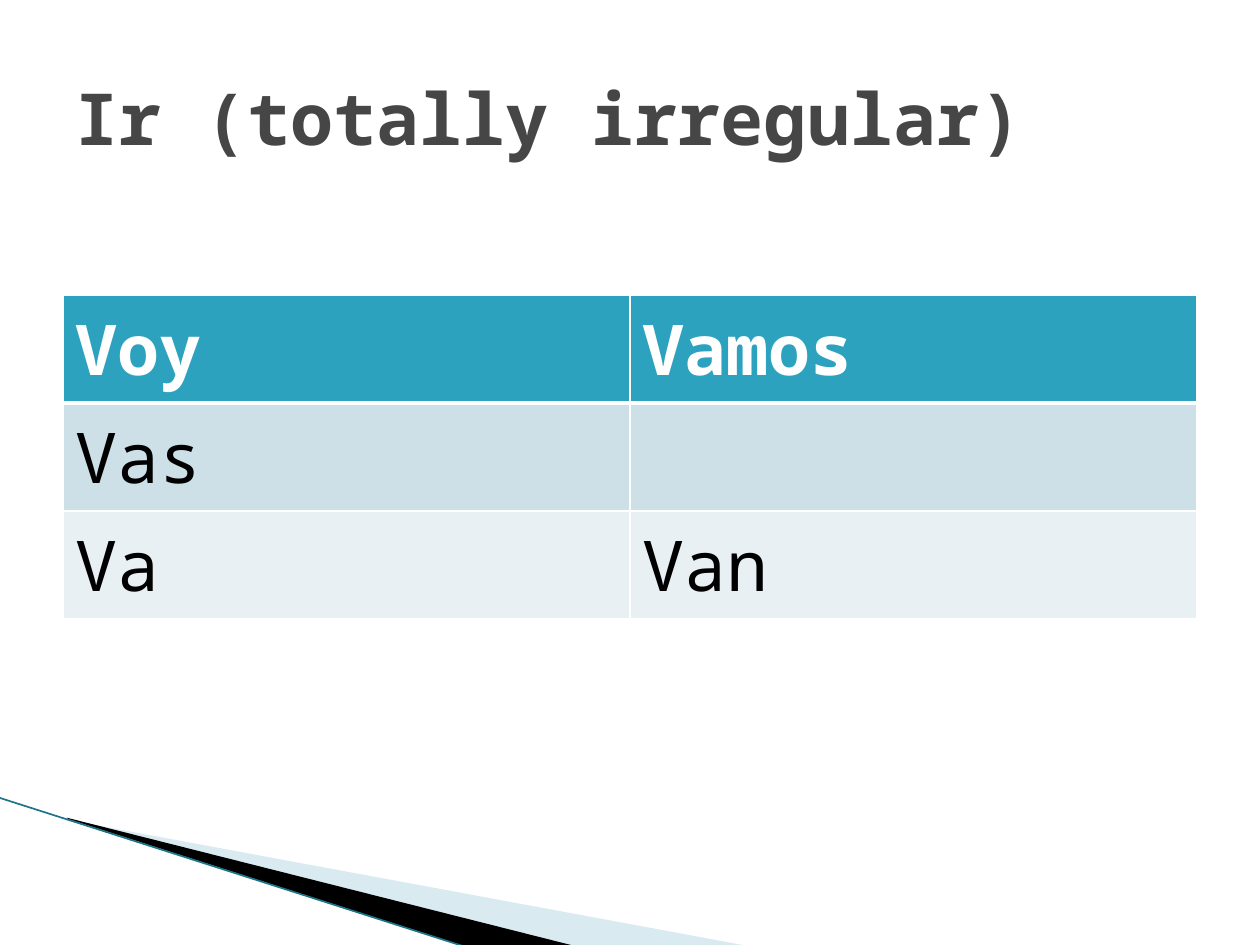
from dataclasses import dataclass

from lxml import etree
from pptx import Presentation
from pptx.dml.color import RGBColor
from pptx.enum.shapes import MSO_CONNECTOR
from pptx.enum.text import MSO_ANCHOR
from pptx.oxml.ns import qn
from pptx.util import Inches, Pt

STRAIGHT = MSO_CONNECTOR.STRAIGHT
MIDDLE = MSO_ANCHOR.MIDDLE


@dataclass(frozen=True)
class Theme:
    font: str = "Noto Sans Mono"
    title_size: int = 41
    cell_size: int = 40
    title: str = "464646"
    header: str = "2DA2BF"
    bands: tuple = ("CDE0E8", "E8F0F4")
    white: str = "FFFFFF"
    black: str = "000000"
    pale_wedge: str = "A0CBDC"
    edge: str = "1B7587"


theme = Theme()


def style(paragraph, size, color, bold):
    font = paragraph.font
    font.name = theme.font
    font.size = Pt(size)
    font.bold = bold
    font.color.rgb = RGBColor.from_string(color)


def add_border(cell, side, width):
    line = etree.SubElement(cell._tc.get_or_add_tcPr(), qn(f"a:ln{side}"), w=str(Pt(width)))
    fill = etree.SubElement(line, qn("a:solidFill"))
    etree.SubElement(fill, qn("a:srgbClr"), val=theme.white)


presentation = Presentation()
presentation.slide_width = Inches(10)
presentation.slide_height = Inches(7.5)
slide = presentation.slides.add_slide(presentation.slide_layouts[6])

# Corner wedges
wedges = [
    (theme.pale_wedge, 40, [(0.55, 6.51), (5.95, 7.51), (4.56, 7.51), (0.55, 6.5)]),
    (theme.black, 100, [(0.53, 6.49), (4.57, 7.51), (3.72, 7.52), (0.54, 6.5)]),
]
for color, opacity, corners in wedges:
    points = [(Inches(x), Inches(y)) for x, y in corners]
    builder = slide.shapes.build_freeform(*points[0])
    builder.add_line_segments(points[1:], close=True)
    wedge = builder.convert_to_shape()
    wedge.shadow.inherit = False
    wedge.line.fill.background()
    wedge.fill.solid()
    wedge.fill.fore_color.rgb = RGBColor.from_string(color)
    if opacity < 100:
        color_element = wedge._element.spPr.find(f".//{qn('a:srgbClr')}")
        etree.SubElement(color_element, qn("a:alpha"), val=str(opacity * 1000))

# Corner edge line
edge = slide.shapes.add_connector(
    STRAIGHT, Inches(-0.01), Inches(6.33), Inches(3.71), Inches(7.52))
edge.line.width = Pt(0.95)
edge.line.color.rgb = RGBColor.from_string(theme.edge)
etree.SubElement(edge._element.spPr, qn("a:effectLst"))

# Conjugation table
rows = [("Voy", "Vamos"), ("Vas", ""), ("Va", "Van")]
table = slide.shapes.add_table(
    len(rows), 2, Inches(0.5), Inches(2.34), Inches(9), Inches(2.56)).table
for row_index, words in enumerate(rows):
    is_header = row_index == 0
    fill_color = theme.header if is_header else theme.bands[row_index - 1]
    for column_index, word in enumerate(words):
        cell = table.cell(row_index, column_index)
        for side in "LRTB":
            at_header_edge = (row_index, side) in ((0, "B"), (1, "T"))
            add_border(cell, side, 3 if at_header_edge else 1)
        cell.fill.solid()
        cell.fill.fore_color.rgb = RGBColor.from_string(fill_color)
        if word:
            cell.text = word
            style(cell.text_frame.paragraphs[0], theme.cell_size,
                  theme.white if is_header else theme.black, is_header)

# Title
title = slide.shapes.add_textbox(Inches(0.5), Inches(0.3), Inches(9), Inches(1.25))
title.text_frame.word_wrap = True
title.text_frame.vertical_anchor = MIDDLE
title.text_frame.text = "Ir (totally irregular)"
style(title.text_frame.paragraphs[0], theme.title_size, theme.title, True)

presentation.save("out.pptx")
